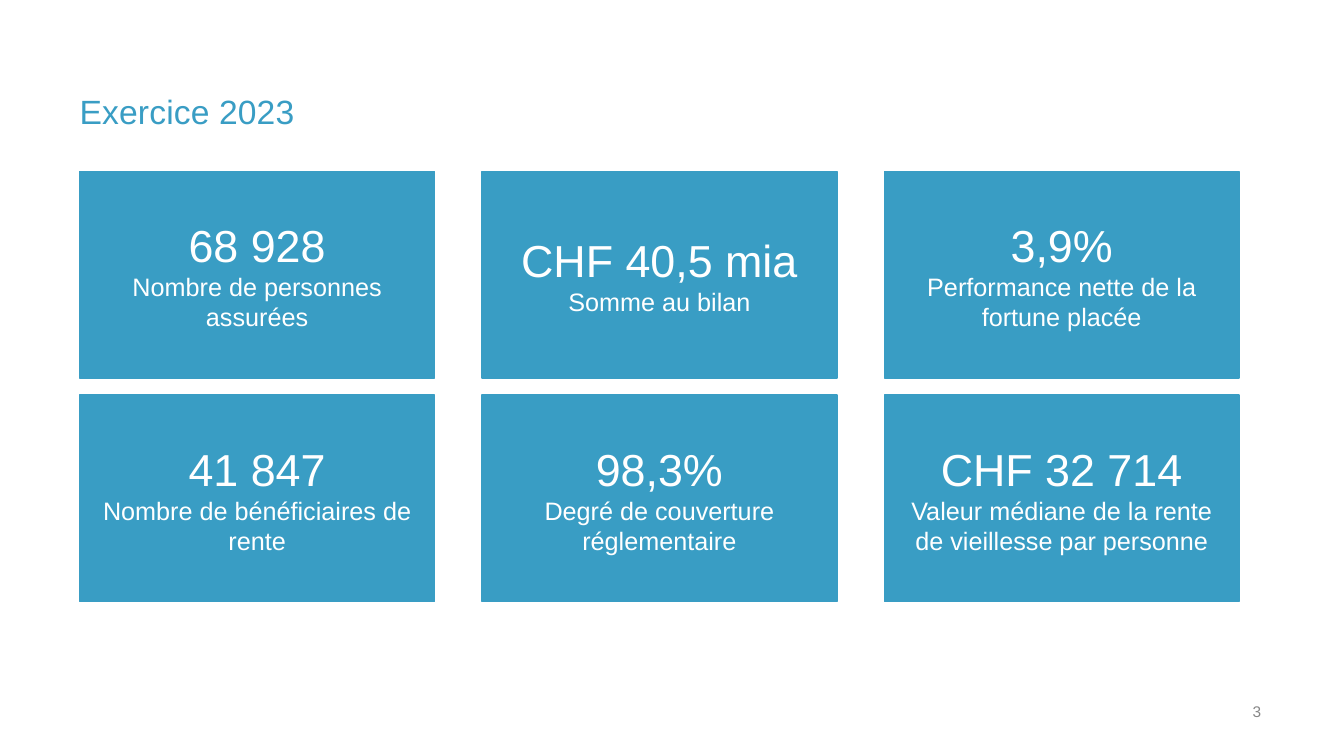
from pptx import Presentation
from pptx.dml.color import RGBColor
from pptx.enum import shapes, text
from pptx.util import Inches, Pt

BLUE = RGBColor(0x39, 0x9D, 0xC4)
GREY = RGBColor(0x87, 0x87, 0x87)
WHITE = RGBColor(0xFF, 0xFF, 0xFF)
FONT = "Arial"

# Key figures, row by row
FIGURES = [
    [("68 928", "Nombre de personnes assurées"),
     ("CHF 40,5 mia", "Somme au bilan"),
     ("3,9%", "Performance nette de la fortune placée")],
    [("41 847", "Nombre de bénéficiaires de rente"),
     ("98,3%", "Degré de couverture réglementaire"),
     ("CHF 32 714", "Valeur médiane de la rente de vieillesse par personne")],
]
CARD_W, CARD_H = 3.52, 2.05
GRID_LEFT, GRID_TOP = 0.79, 1.7
STEP_X, STEP_Y = 3.99, 2.22


class FiguresSlide:
    def __init__(self, prs):
        self.s = prs.slides.add_slide(prs.slide_layouts[5])

    def add_run(self, p, content, size, color):
        r = p.add_run()
        r.text = content
        r.font.name = FONT
        r.font.size = Pt(size)
        r.font.color.rgb = color
        return r

    def flush_frame(self, sp):
        tf = sp.text_frame
        tf.margin_left = tf.margin_right = tf.margin_top = tf.margin_bottom = 0
        tf.word_wrap = True
        tf.vertical_anchor = text.MSO_ANCHOR.BOTTOM
        return tf

    def title(self, content):
        sp = self.s.shapes.title
        sp.left, sp.top = Inches(0.79), Inches(0.87)
        sp.width, sp.height = Inches(9.74), Inches(0.44)
        tf = self.flush_frame(sp)
        tf.auto_size = text.MSO_AUTO_SIZE.NONE
        p = tf.paragraphs[0]
        p.alignment = text.PP_ALIGN.LEFT
        p.line_spacing = 0.9
        r = self.add_run(p, content, 24, BLUE)
        r.font._element.set("spc", "10")

    def page_number(self, content):
        sp = self.s.shapes.add_textbox(Inches(11.15), Inches(6.96),
                                       Inches(1.36), Inches(0.19))
        p = self.flush_frame(sp).paragraphs[0]
        p.alignment = text.PP_ALIGN.RIGHT
        self.add_run(p, content, 11, GREY)

    def card(self, left, top, value, label):
        sp = self.s.shapes.add_shape(shapes.MSO_SHAPE.RECTANGLE, Inches(left), Inches(top),
                                     Inches(CARD_W), Inches(CARD_H))
        sp.shadow.inherit = False
        sp.fill.solid()
        sp.fill.fore_color.rgb = BLUE
        sp.line.color.rgb = BLUE
        sp.line.width = Pt(1)
        tf = sp.text_frame
        tf.word_wrap = True
        tf.vertical_anchor = text.MSO_ANCHOR.MIDDLE
        for p, content, size in ((tf.paragraphs[0], value, 32),
                                 (tf.add_paragraph(), label, 18)):
            p.alignment = text.PP_ALIGN.CENTER
            self.add_run(p, content, size, WHITE)


def main():
    prs = Presentation()
    prs.slide_width, prs.slide_height = Inches(13.33), Inches(7.5)
    slide = FiguresSlide(prs)

    # Heading and page number
    slide.title("Exercice 2023")
    slide.page_number("3")

    # Grid of cards
    for row, figures in enumerate(FIGURES):
        for col, (value, label) in enumerate(figures):
            slide.card(GRID_LEFT + col * STEP_X, GRID_TOP + row * STEP_Y, value, label)

    prs.save("out.pptx")


if __name__ == "__main__":
    main()
